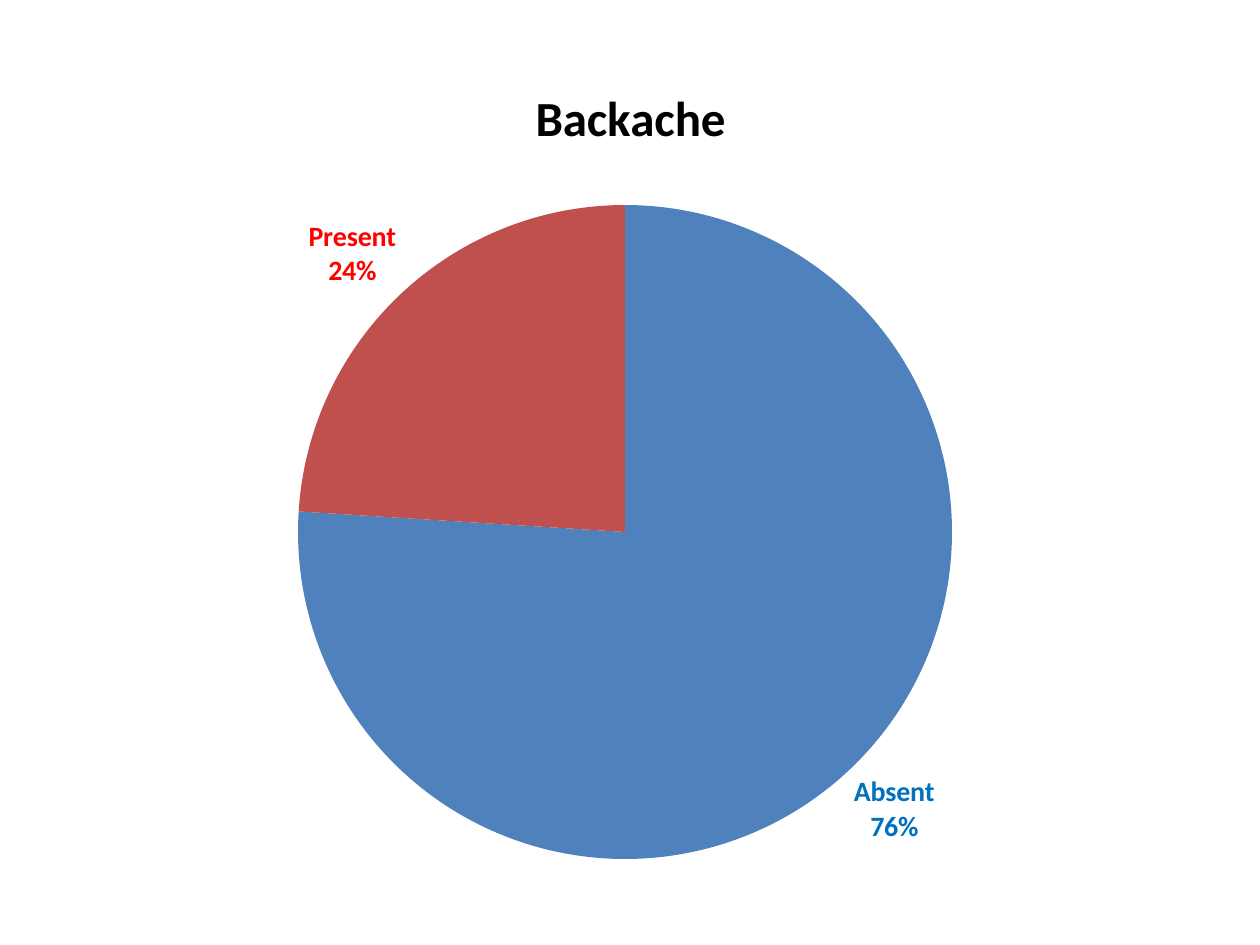
from lxml import etree
from pptx import Presentation
from pptx.chart.data import CategoryChartData
from pptx.dml.color import RGBColor
from pptx.enum.chart import XL_CHART_TYPE, XL_LABEL_POSITION
from pptx.oxml.ns import qn
from pptx.util import Inches, Pt

PIE = XL_CHART_TYPE.PIE
OUT_END = XL_LABEL_POSITION.OUTSIDE_END
COLORS = {
    "text": "000000",
    "absent": "4F81BD",
    "present": "C0504D",
    "absent_label": "0070C0",
    "present_label": "FF0000",
}
SLICES = [("Absent", 76), ("Present", 24)]


def style(font, size, color, bold=False):
    font.name = "Calibri"
    font.size = Pt(size)
    font.bold = bold
    font.color.rgb = RGBColor.from_string(COLORS[color])


def write(frame, text, **form):
    frame.text = text
    style(frame.paragraphs[0].runs[0].font, **form)


def place(owner, index, **spots):
    layout = owner.find(qn("c:layout"))
    if layout is None:
        layout = etree.Element(qn("c:layout"))
        owner.insert(index, layout)
    manual = etree.SubElement(layout, qn("c:manualLayout"))
    if "w" in spots:
        etree.SubElement(manual, qn("c:layoutTarget")).set("val", "inner")
    for axis in ("x", "y"):
        etree.SubElement(manual, qn(f"c:{axis}Mode")).set("val", "edge")
    for key, value in spots.items():
        etree.SubElement(manual, qn(f"c:{key}")).set("val", str(value))


def show_share(label):
    for flag, value in (("Val", 0), ("CatName", 1), ("Percent", 1)):
        label.find(qn(f"c:show{flag}")).set("val", str(value))
    mark = etree.Element(qn("c:separator"))
    mark.text = "\n"
    last = label.find(qn("c:showBubbleSize"))
    if last is None:
        last = label.find(qn("c:showPercent"))
    last.addnext(mark)


class Deck:
    def __init__(self):
        self.show = Presentation()
        self.show.slide_width = Inches(10)
        self.show.slide_height = Inches(7.5)
        self.slide = self.show.slides.add_slide(self.show.slide_layouts[6])

    def pie(self, title, slices, left, top, width, height):
        data = CategoryChartData()
        data.categories = [name for name, value in slices]
        data.add_series("Series 1", [value for name, value in slices])
        chart = self.slide.shapes.add_chart(
            PIE, Inches(left), Inches(top), Inches(width), Inches(height), data
        ).chart
        style(chart.font, 10, "text")
        chart.has_legend = False
        chart.has_title = True
        write(chart.chart_title.text_frame, title, size=28, color="text", bold=True)
        place(chart.chart_title._element, 1, x=0.42, y=0.04)
        area = chart._chartSpace.find(".//" + qn("c:plotArea"))
        place(area, 0, x=0.22, y=0.19, w=0.57, h=0.76)

        plot = chart.plots[0]
        plot.vary_by_categories = True
        series = plot.series[0]
        labels = series.data_labels
        labels.number_format = "0%"
        labels.number_format_is_linked = False
        labels.position = OUT_END
        style(labels.font, 16, "absent", True)
        for index, (name, value) in enumerate(slices):
            key = name.lower()
            point = series.points[index]
            point.format.fill.solid()
            point.format.fill.fore_color.rgb = RGBColor.from_string(COLORS[key])
            style(point.data_label.font, 16, key + "_label", True)
            point.data_label.position = OUT_END
        group = labels._element
        for label in [group, *group.findall(qn("c:dLbl"))]:
            show_share(label)


def main():
    deck = Deck()
    deck.pie("Backache", SLICES, 0.33, 0.33, 9.17, 6.83)
    deck.show.save("out.pptx")


if __name__ == "__main__":
    main()
